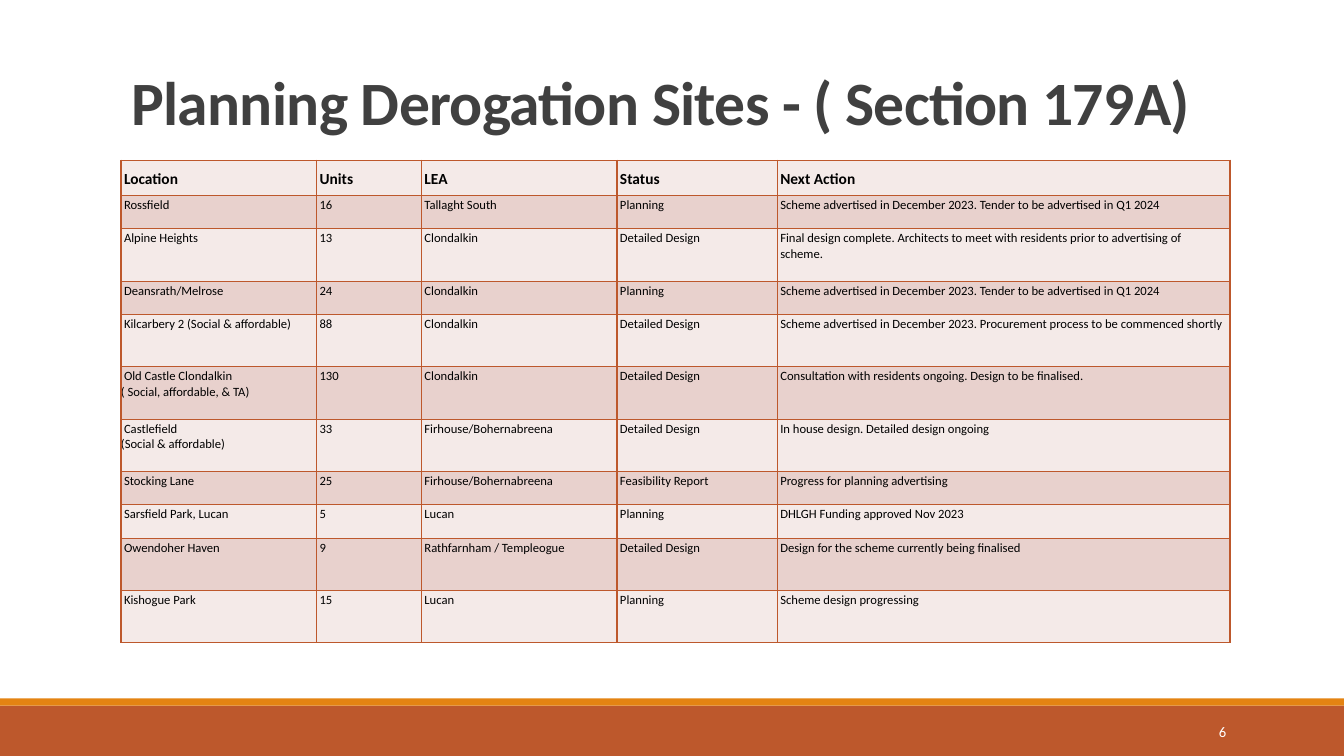
from pptx import Presentation
from pptx.dml.color import RGBColor
from pptx.enum.shapes import MSO_SHAPE
from pptx.enum.text import MSO_ANCHOR, MSO_AUTO_SIZE, PP_ALIGN
from pptx.oxml import parse_xml
from pptx.oxml.ns import nsdecls
from pptx.util import Inches, Pt

RUST = RGBColor(0xBD, 0x58, 0x2C)
ORANGE = RGBColor(0xE4, 0x83, 0x12)
CHARCOAL = RGBColor(0x40, 0x40, 0x40)
BLACK = RGBColor(0, 0, 0)
WHITE = RGBColor(0xFF, 0xFF, 0xFF)
LIGHT_BAND = RGBColor(0xF4, 0xEA, 0xE8)
DARK_BAND = RGBColor(0xE8, 0xD1, 0xCD)
FONT = "Calibri"

COLUMN_WIDTHS = [1.94, 1.04, 1.94, 1.59, 4.49]
HEADER_HEIGHT, SHORT_ROW, TALL_ROW = 0.35, 0.33, 0.52
TALL_SITES = {2, 4, 5, 6, 9, 10}
ADVERTISED = "Scheme advertised in December 2023. "
TENDER = ADVERTISED + "Tender to be advertised in Q1 2024"
SITES = [
    ("Location", "Units", "LEA", "Status", "Next Action"),
    ("Rossfield", "16", "Tallaght South", "Planning", TENDER),
    ("Alpine Heights", "13", "Clondalkin", "Detailed Design",
     "Final design complete. Architects to meet with residents prior to advertising of\nscheme."),
    ("Deansrath/Melrose", "24", "Clondalkin", "Planning", TENDER),
    ("Kilcarbery 2 (Social & affordable)", "88", "Clondalkin", "Detailed Design",
     ADVERTISED + "Procurement process to be commenced shortly"),
    ("Old Castle Clondalkin\n( Social, affordable, & TA)", "130", "Clondalkin",
     "Detailed Design", "Consultation with residents ongoing. Design to be finalised."),
    ("Castlefield\n(Social & affordable)", "33", "Firhouse/Bohernabreena",
     "Detailed Design", "In house design. Detailed design ongoing"),
    ("Stocking Lane", "25", "Firhouse/Bohernabreena", "Feasibility Report",
     "Progress for planning advertising"),
    ("Sarsfield Park, Lucan", "5", "Lucan", "Planning", "DHLGH Funding approved Nov 2023"),
    ("Owendoher Haven", "9", "Rathfarnham / Templeogue", "Detailed Design",
     "Design for the scheme currently being finalised"),
    ("Kishogue Park", "15", "Lucan", "Planning", "Scheme design progressing"),
]


def style_run(r, size, color, bold=False):
    r.font.name, r.font.size, r.font.bold = FONT, Pt(size), bold
    r.font.color.rgb = color


def add_band(slide, left, top, width, height, color):
    sp = slide.shapes.add_shape(MSO_SHAPE.RECTANGLE, Inches(left), Inches(top),
                                Inches(width), Inches(height))
    sp.shadow.inherit = False
    sp.fill.solid()
    sp.fill.fore_color.rgb = color
    sp.line.fill.background()


def add_footer(slide, left, top, width, height, number):
    stripe = 0.07
    add_band(slide, left, top + stripe, width, height - stripe, RUST)
    add_band(slide, left, top, width, stripe, ORANGE)
    box = slide.shapes.add_textbox(Inches(left + width - 2.5), Inches(top + 0.13),
                                   Inches(1.43), Inches(0.4))
    tf = box.text_frame
    tf.word_wrap = True
    tf.vertical_anchor = MSO_ANCHOR.MIDDLE
    tf.text = number
    p = tf.paragraphs[0]
    p.alignment = PP_ALIGN.RIGHT
    style_run(p.runs[0], 10.5, WHITE)


def set_title(slide, left, top, width, height, text):
    title = slide.shapes.title
    title.left, title.top = Inches(left), Inches(top)
    title.width, title.height = Inches(width), Inches(height)
    tf = title.text_frame
    tf.text = text
    tf.word_wrap = True
    tf.auto_size = MSO_AUTO_SIZE.NONE
    tf.vertical_anchor = MSO_ANCHOR.BOTTOM
    p = tf.paragraphs[0]
    p.alignment = PP_ALIGN.LEFT
    p.line_spacing = 0.85
    r = p.runs[0]
    style_run(r, 44, CHARCOAL, bold=True)
    r.font._element.set("spc", "-50")


def add_borders(cell):
    tcPr = cell._tc.get_or_add_tcPr()
    for side in ("lnL", "lnR", "lnT", "lnB"):
        tcPr.append(parse_xml(
            f'<a:{side} {nsdecls("a")} w="{Pt(1)}"><a:solidFill>'
            f'<a:srgbClr val="{RUST}"/></a:solidFill></a:{side}>'))


def fill_cell(cell, text, is_header, band):
    cell.margin_left, cell.margin_right = 0, Inches(0.04)
    cell.margin_top = Inches(0.01 if is_header else 0.02)
    cell.margin_bottom = Inches(0.07)
    cell.vertical_anchor = MSO_ANCHOR.BOTTOM if is_header else MSO_ANCHOR.TOP
    add_borders(cell)
    cell.fill.solid()
    cell.fill.fore_color.rgb = band
    cell.text_frame.text = text
    for p in cell.text_frame.paragraphs:
        if not p.text.startswith("("):
            p._p.get_or_add_pPr().set("marL", str(Inches(0.03)))
        style_run(p.runs[0], 11 if is_header else 9, BLACK, is_header)


def add_sites_table(slide, left, top):
    heights = [HEADER_HEIGHT] + [TALL_ROW if i in TALL_SITES else SHORT_ROW
                                 for i in range(1, len(SITES))]
    table = slide.shapes.add_table(
        len(SITES), len(COLUMN_WIDTHS), Inches(left), Inches(top),
        Inches(sum(COLUMN_WIDTHS)), Inches(sum(heights))).table
    for column, width in zip(table.columns, COLUMN_WIDTHS):
        column.width = Inches(width)
    for i, (site, height) in enumerate(zip(SITES, heights)):
        table.rows[i].height = Inches(height)
        band = DARK_BAND if i % 2 else LIGHT_BAND
        for j, text in enumerate(site):
            fill_cell(table.cell(i, j), text, i == 0, band)


def main():
    prs = Presentation()
    prs.slide_width, prs.slide_height = Inches(13.33), Inches(7.5)
    slide = prs.slides.add_slide(prs.slide_layouts[5])
    set_title(slide, 1.2, 0.31, 11, 1.11, "Planning Derogation Sites - ( Section 179A)")
    add_footer(slide, 0, 6.93, 13.33, 0.57, "6")
    add_sites_table(slide, 1.2, 1.59)
    prs.save("out.pptx")


if __name__ == "__main__":
    main()
